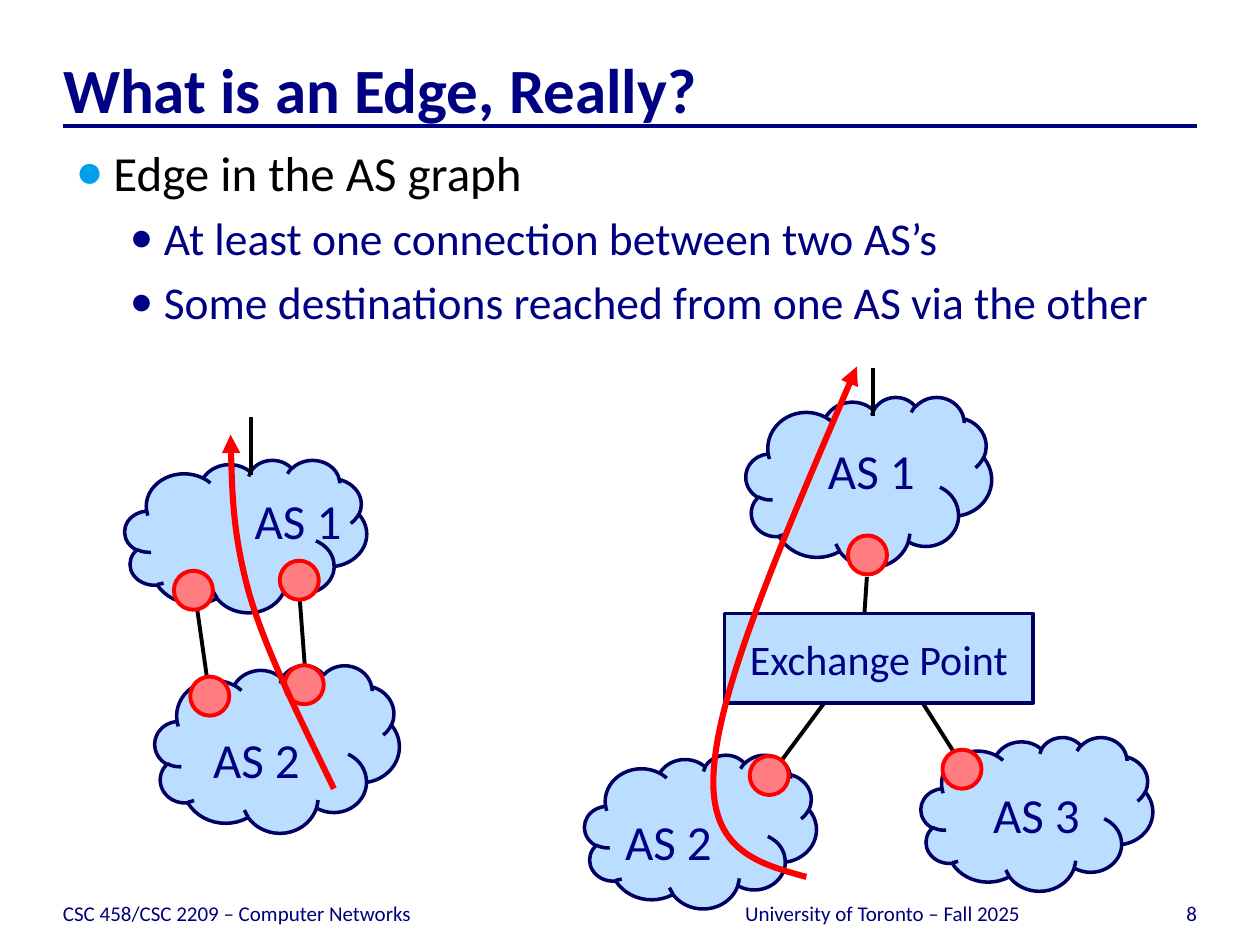
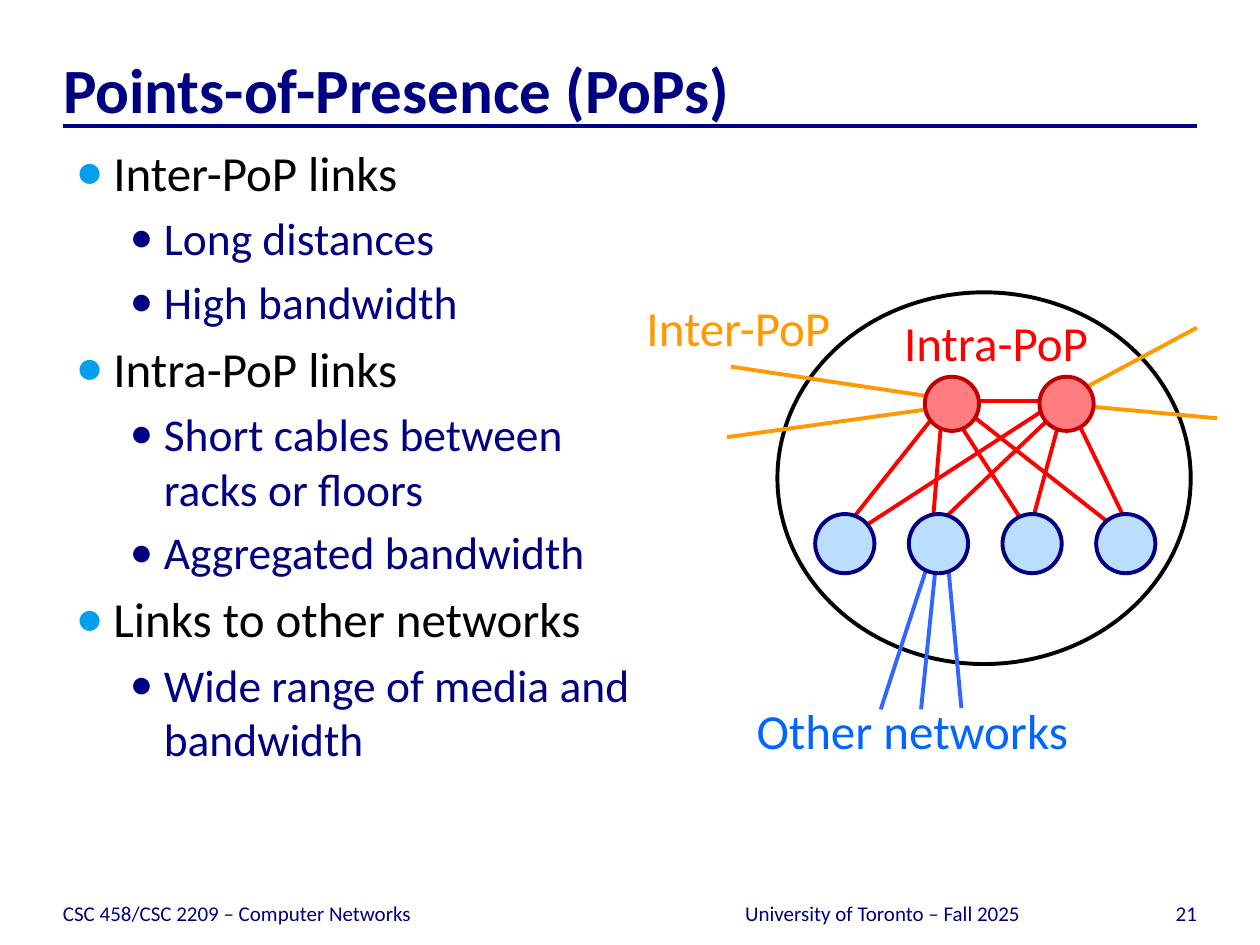
from lxml import etree
from pptx import Presentation
from pptx.dml.color import RGBColor
from pptx.enum.shapes import MSO_CONNECTOR, MSO_SHAPE
from pptx.enum.text import MSO_ANCHOR, MSO_AUTO_SIZE, PP_ALIGN
from pptx.oxml.ns import qn
from pptx.util import Inches, Pt

# ---- Shared look ----
FONT = "Calibri"
NAVY, CLOUD_EDGE, FOOTER_INK = "000082", "000062", "00007C"
SKY, PINK, RED, DARK_RED = "BBDDFF", "FF7C80", "FF0000", "C00000"
BLACK, ORANGE, BLUE, LABEL_BLUE = "000000", "FF9900", "3366FF", "0066FF"

TITLE_BOX = (0.5, 0.33, 9, 0.67)
TITLE_RULE = (0.5, 1, 9.5, 1)
BODY_LEVELS = [
    {"size": 28, "ink": BLACK, "bullet": "009FEC", "percent": 95, "left": 0.3, "hang": 0.3},
    {"size": 26, "ink": NAVY, "bullet": NAVY, "percent": 85, "left": 0.7, "hang": 0.27},
]
COURSE = ("CSC 458/CSC 2209 – Computer Networks", (0.5, 6.95, 4.83, 0.4), PP_ALIGN.LEFT)
TERM = ("University of Toronto – Fall 2025", (5.42, 6.95, 3.17, 0.4), PP_ALIGN.CENTER)
NUMBER_BOX = (8.67, 6.95, 0.83, 0.4)

# ---- Slide content: bullets are (level, text) ----
EDGE = {
    "title": "What is an Edge, Really?",
    "number": "8",
    "body_width": 9,
    "bullets": [
        (0, "Edge in the AS graph"),
        (1, "At least one connection between two AS’s"),
        (1, "Some destinations reached from one AS via the other"),
    ],
}
POPS = {
    "title": "Points-of-Presence (PoPs)",
    "number": "21",
    "body_width": 4.83,
    "bullets": [
        (0, "Inter-PoP links"),
        (1, "Long distances"),
        (1, "High bandwidth"),
        (0, "Intra-PoP links"),
        (1, "Short cables between racks or floors"),
        (1, "Aggregated bandwidth"),
        (0, "Links to other networks"),
        (1, "Wide range of media and bandwidth"),
    ],
}

# Edge diagram: boxes are left, top, width, height; links are x1, y1, x2, y2
HIDDEN_LINK = (6.17, 6.08, 6.63, 5.46)
AS_CLOUDS = [
    (4.64, 5.99, 1.84, 1.22), (7.31, 5.85, 1.84, 1.22), (5.92, 3.15, 1.95, 1.35),
    (1.23, 5.28, 1.94, 1.33), (0.99, 3.65, 1.92, 1.21),
]
AS_LINKS = [
    (2.43, 5.43, 2.37, 4.63), (1.65, 5.43, 1.55, 4.73), (1.99, 3.31, 1.99, 3.77),
    (7.59, 6, 7.19, 5.37), (6.86, 4.88, 6.88, 4.58), (6.93, 2.92, 6.93, 3.3),
]
ROUTER_SIZE = 0.31
BORDER_ROUTERS = [(2.26, 5.28), (2.22, 4.45), (1.38, 4.53), (1.51, 5.37),
                  (6.73, 4.25), (5.95, 6), (7.48, 5.95)]
EXCHANGE = ("Exchange Point", (5.75, 4.87, 2.45, 0.71))
AS_LABELS = [
    ("AS 1", (1.87, 3.84, 0.99, 0.57)), ("AS 2", (1.54, 5.74, 0.99, 0.57)),
    ("AS 1", (6.47, 3.45, 0.89, 0.57)), ("AS 2", (4.81, 6.39, 0.99, 0.57)),
    ("AS 3", (7.73, 6.18, 0.99, 0.57)),
]
# Start point, then three Bezier points for each curve piece
TRAFFIC_PATHS = [
    [(2.65, 6.26), (2.39, 5.72), (2.12, 5.19), (1.98, 4.72),
     (1.85, 4.25), (1.84, 3.85), (1.83, 3.45)],
    [(6.4, 6.96), (6, 6.85), (5.6, 6.74), (5.67, 6.06),
     (5.73, 5.39), (6.27, 4.15), (6.8, 2.91)],
]

# PoP diagram
POP_OUTLINE = (6.17, 2.32, 3.28, 2.95)
INTRA_LINKS = [
    (8.98, 4.29, 7.68, 3.27), (7.6, 3.34, 8.09, 4.1), (7.69, 3.18, 8.25, 3.18),
    (7.51, 3.18, 6.7, 4.2), (7.4, 4.18, 7.47, 3.35), (8.26, 3.27, 6.78, 4.23),
    (7.51, 4.1, 8.33, 3.32), (8.4, 3.37, 8.2, 4.11), (9, 4.27, 8.54, 3.32),
]
INTER_LINKS = [
    (7.47, 3.16, 5.8, 2.91), (8.55, 3.11, 9.5, 2.6),
    (8.58, 3.22, 9.66, 3.32), (7.35, 3.25, 5.77, 3.47),
]
OTHER_LINKS = [(7.37, 4.46, 6.99, 5.63), (7.43, 4.46, 7.31, 5.63), (7.52, 4.43, 7.63, 5.62)]
POP_LABELS = [
    ("Intra-PoP", (7.04, 2.43, 1.73, 0.57), RED),
    ("Other networks", (5.83, 5.51, 2.82, 0.57), LABEL_BLUE),
    ("Inter-PoP", (5, 2.31, 1.72, 0.57), ORANGE),
]
# Rows of routers: count, left, top, diameter, step, fill, edge
POP_ROUTERS = [
    (2, 7.34, 2.99, 0.43, 0.91, PINK, DARK_RED),
    (4, 6.47, 4.08, 0.47, 2.23 / 3, SKY, NAVY),
]


# ---- Helpers ----
def color(target, value):
    """Colour a font, or make a fill solid."""
    if hasattr(target, "solid"):
        target.solid()
        target.fore_color.rgb = RGBColor.from_string(value)
    else:
        target.color.rgb = RGBColor.from_string(value)


def assign(target, values):
    for name, value in values.items():
        setattr(target, name, value)


def place(shape, box):
    assign(shape, dict(zip(("left", "top", "width", "height"), map(Inches, box))))


def write(paragraph, text, size, ink, align=None, bold=None):
    paragraph.alignment = align
    run = paragraph.add_run()
    run.text = text
    assign(run.font, {"name": FONT, "size": Pt(size), "bold": bold})
    color(run.font, ink)


def stroke(line, ink, width):
    color(line.fill, ink)
    line.width = Pt(width)


def add_links(slide, links, ink):
    for link in links:
        connector = slide.shapes.add_connector(MSO_CONNECTOR.STRAIGHT, *map(Inches, link))
        stroke(connector.line, ink, 2.25)
        etree.SubElement(connector._element.spPr, qn("a:effectLst"))


def add_figure(slide, kind, box, fill, edge, width=2.25):
    figure = slide.shapes.add_shape(kind, *map(Inches, box))
    figure.shadow.inherit = False
    if fill:
        color(figure.fill, fill)
    else:
        figure.fill.background()
    stroke(figure.line, edge, width)
    return figure


def add_label(slide, text, box, ink):
    frame = slide.shapes.add_textbox(*map(Inches, box)).text_frame
    assign(frame, {"word_wrap": False, "auto_size": MSO_AUTO_SIZE.SHAPE_TO_FIT_TEXT})
    write(frame.paragraphs[0], text, 28, ink, PP_ALIGN.CENTER)


def add_footer(slide, text, box, align):
    frame = slide.shapes.add_textbox(*map(Inches, box)).text_frame
    assign(frame, {"word_wrap": True, "vertical_anchor": MSO_ANCHOR.BOTTOM,
                   "margin_left": 0, "margin_top": 0, "margin_right": 0, "margin_bottom": 0})
    write(frame.paragraphs[0], text, 12, FOOTER_INK, align)


def add_bullet(paragraph, level, text):
    look = BODY_LEVELS[level]
    paragraph.level = level
    write(paragraph, text, look["size"], look["ink"])
    props = paragraph._p.get_or_add_pPr()
    props.set("marL", str(Inches(look["left"])))
    props.set("indent", str(-Inches(look["hang"])))
    bullet_color = etree.SubElement(props, qn("a:buClr"))
    etree.SubElement(bullet_color, qn("a:srgbClr"), val=look["bullet"])
    etree.SubElement(props, qn("a:buSzPct"), val=str(look["percent"] * 1000))
    etree.SubElement(props, qn("a:buChar"), char="●")


def add_traffic(slide, points):
    """Draw a red Bezier curve with an arrowhead at its end."""
    start, *rest = [(Inches(x), Inches(y)) for x, y in points]
    builder = slide.shapes.build_freeform(*start)
    builder.add_line_segments(rest, close=False)
    curve = builder.convert_to_shape()
    curve.shadow.inherit = False
    curve.fill.background()
    stroke(curve.line, RED, 3.5)
    etree.SubElement(curve.line._get_or_add_ln(), qn("a:tailEnd"), type="triangle")
    # Join each three straight pieces into one cubic piece
    segments = list(curve._element.iter(qn("a:lnTo")))
    outline = segments[0].getparent()
    for first in range(0, len(segments), 3):
        cubic = etree.SubElement(outline, qn("a:cubicBezTo"))
        for segment in segments[first:first + 3]:
            cubic.append(segment[0])
            outline.remove(segment)


def add_page(deck, content):
    """Title, rule, bullets and footers that every slide has."""
    slide = deck.slides.add_slide(deck.slide_layouts[1])
    add_links(slide, [TITLE_RULE], NAVY)

    title = slide.shapes.title
    place(title, TITLE_BOX)
    assign(title.text_frame, {
        "vertical_anchor": MSO_ANCHOR.BOTTOM, "auto_size": MSO_AUTO_SIZE.NONE,
        "margin_left": 0, "margin_top": Inches(0.05), "margin_right": 0, "margin_bottom": 0})
    write(title.text_frame.paragraphs[0], content["title"], 36, NAVY, PP_ALIGN.LEFT, True)

    body = slide.placeholders[1]
    place(body, (0.5, 1.08, content["body_width"], 5.83))
    frame = body.text_frame
    frame.auto_size = MSO_AUTO_SIZE.NONE
    for index, (level, text) in enumerate(content["bullets"]):
        add_bullet(frame.add_paragraph() if index else frame.paragraphs[0], level, text)

    for footer in (COURSE, (content["number"], NUMBER_BOX, PP_ALIGN.RIGHT), TERM):
        add_footer(slide, *footer)
    return slide


# ---- Slides ----
def build_edge(deck):
    slide = add_page(deck, EDGE)
    add_links(slide, [HIDDEN_LINK], BLACK)
    for box in AS_CLOUDS:
        add_figure(slide, MSO_SHAPE.CLOUD, box, SKY, CLOUD_EDGE, 2)
    add_links(slide, AS_LINKS, BLACK)
    for left, top in BORDER_ROUTERS:
        add_figure(slide, MSO_SHAPE.OVAL, (left, top, ROUTER_SIZE, ROUTER_SIZE), PINK, RED)
    for text, box in AS_LABELS:
        add_label(slide, text, box, NAVY)

    text, box = EXCHANGE
    exchange = add_figure(slide, MSO_SHAPE.RECTANGLE, box, SKY, CLOUD_EDGE, 2)
    exchange.text_frame.vertical_anchor = MSO_ANCHOR.MIDDLE
    write(exchange.text_frame.paragraphs[0], text, 24, NAVY, PP_ALIGN.CENTER)
    for points in TRAFFIC_PATHS:
        add_traffic(slide, points)


def build_pops(deck):
    slide = add_page(deck, POPS)
    add_links(slide, INTRA_LINKS, RED)
    add_figure(slide, MSO_SHAPE.OVAL, POP_OUTLINE, None, BLACK)
    add_links(slide, INTER_LINKS, ORANGE)
    add_links(slide, OTHER_LINKS, BLUE)
    for label in POP_LABELS:
        add_label(slide, *label)
    for count, left, top, size, step, fill, edge in POP_ROUTERS:
        for index in range(count):
            add_figure(slide, MSO_SHAPE.OVAL, (left + index * step, top, size, size), fill, edge)


def main():
    deck = Presentation()
    assign(deck, {"slide_width": Inches(10), "slide_height": Inches(7.5)})
    build_edge(deck)
    build_pops(deck)
    deck.save("out.pptx")


if __name__ == "__main__":
    main()
